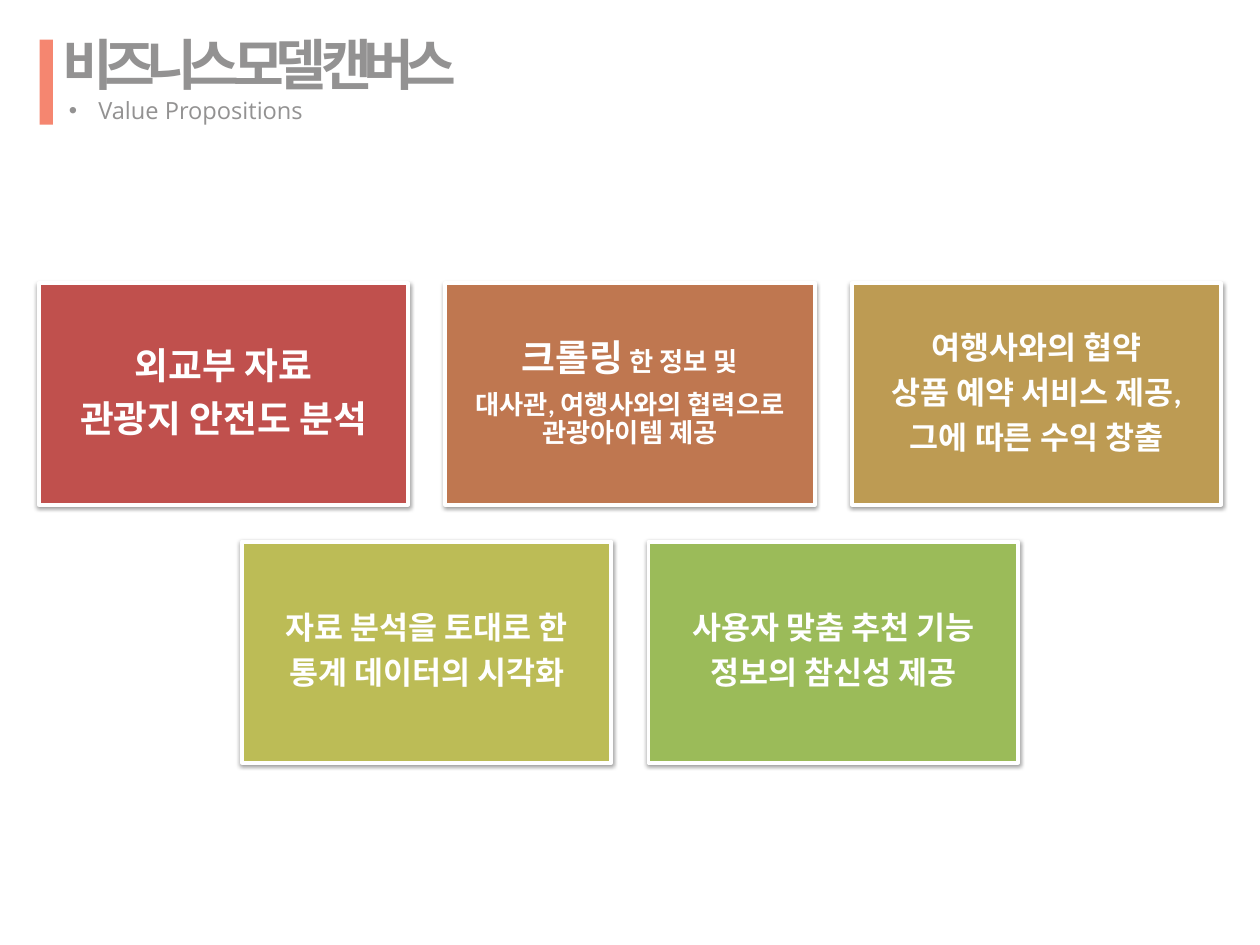
import pptx
import pptx.dml.color
import pptx.enum.shapes
import pptx.enum.text
import pptx.oxml
import pptx.oxml.ns
import pptx.util
from lxml import etree

Inches = pptx.util.Inches
Pt = pptx.util.Pt
RGBColor = pptx.dml.color.RGBColor
RECTANGLE = pptx.enum.shapes.MSO_SHAPE.RECTANGLE
qn = pptx.oxml.ns.qn

WHITE = RGBColor(0xFF, 0xFF, 0xFF)
GRAY = RGBColor(0x93, 0x92, 0x92)
CORAL = RGBColor(0xF5, 0x86, 0x70)
RED = RGBColor(0xC0, 0x50, 0x4D)
RUST = RGBColor(0xBF, 0x77, 0x50)
GOLD = RGBColor(0xBD, 0x9B, 0x53)
OLIVE = RGBColor(0xBC, 0xBC, 0x56)
GREEN = RGBColor(0x9B, 0xBB, 0x59)

SLIDE_WIDTH, SLIDE_HEIGHT = 13.33, 10
MARGIN = 0.42
CARD_WIDTH, CARD_HEIGHT = 3.91, 2.34
GAP = CARD_WIDTH / 10
CARDS_TOP = 0.3 * SLIDE_HEIGHT

# Each card: fill, inset, paragraphs; each paragraph is a list of (text, size).
CARD_ROWS = [
    [
        (RED, 0.12, [[("외교부 자료", 28)], [("관광지 안전도 분석", 28)]]),
        (RUST, 0.12, [[("크롤링", 28), (" 한 정보 및", 20)],
                      [("대사관, 여행사와의 협력으로 관광아이템 제공", 20)]]),
        (GOLD, 0.1, [[("여행사와의 협약", 24)], [("상품 예약 서비스 제공,", 24)],
                     [("그에 따른 수익 창출", 24)]]),
    ],
    [
        (OLIVE, 0.1, [[("자료 분석을 토대로 한", 24)], [("통계 데이터의 시각화", 24)]]),
        (GREEN, 0.1, [[("사용자 맞춤 추천 기능", 24)], [("정보의 참신성 제공", 24)]]),
    ],
]

SHADOW = (
    '<a:effectLst xmlns:a="http://schemas.openxmlformats.org/drawingml/2006/main">'
    '<a:outerShdw blurRad="40000" dist="20000" dir="5400000" rotWithShape="0">'
    '<a:srgbClr val="000000"><a:alpha val="38000"/></a:srgbClr>'
    '</a:outerShdw></a:effectLst>'
)


def set_insets(text_frame, inset):
    text_frame.margin_left = text_frame.margin_right = Inches(inset)
    text_frame.margin_top = text_frame.margin_bottom = Inches(inset)


def style_run(run, font_name, size, color, bold):
    run.font.name = font_name
    run.font.size = Pt(size)
    run.font.color.rgb = color
    run.font.bold = bold


presentation = pptx.Presentation()
presentation.slide_width = Inches(SLIDE_WIDTH)
presentation.slide_height = Inches(SLIDE_HEIGHT)
slide = presentation.slides.add_slide(presentation.slide_layouts[6])

# Heading
heading = slide.shapes.add_textbox(Inches(0.66), Inches(0.34), Inches(6.51), Inches(0.98))
heading_frame = heading.text_frame
heading_frame.word_wrap = True
set_insets(heading_frame, 0)
heading_frame.text = "비즈니스 모델 캔버스\nValue Propositions"
title, subtitle = heading_frame.paragraphs
title.line_spacing = Pt(49.4)
style_run(title.runs[0], "Arial", 42, GRAY, True)
title.runs[0].font._element.set("spc", "-670")
subtitle.line_spacing = Pt(20.6)
style_run(subtitle.runs[0], "Open Sans", 18, GRAY, False)
subtitle_properties = subtitle._p.get_or_add_pPr()
subtitle_properties.set("marL", str(Inches(0.38)))
subtitle_properties.set("indent", str(Inches(-0.31)))
etree.SubElement(subtitle_properties, qn("a:buFont")).set("typeface", "Arial")
etree.SubElement(subtitle_properties, qn("a:buChar")).set("char", "•")

accent_bar = slide.shapes.add_shape(
    RECTANGLE, Inches(MARGIN), Inches(MARGIN), Inches(0.14), Inches(0.9))
accent_bar.shadow.inherit = False
accent_bar.fill.solid()
accent_bar.fill.fore_color.rgb = CORAL
accent_bar.line.fill.background()

# Value cards, each row centred on the slide
for row, cards in enumerate(CARD_ROWS):
    row_width = len(cards) * (CARD_WIDTH + GAP) - GAP
    row_left = (SLIDE_WIDTH - row_width) / 2
    top = CARDS_TOP + row * (CARD_HEIGHT + GAP)
    for column, (color, inset, paragraphs) in enumerate(cards):
        left = row_left + column * (CARD_WIDTH + GAP)
        card = slide.shapes.add_shape(
            RECTANGLE, Inches(left), Inches(top), Inches(CARD_WIDTH), Inches(CARD_HEIGHT))
        card.fill.solid()
        card.fill.fore_color.rgb = color
        card.line.color.rgb = WHITE
        card.line.width = Pt(3)
        card._element.spPr.append(pptx.oxml.parse_xml(SHADOW))

        text_frame = card.text_frame
        text_frame.word_wrap = True
        text_frame.vertical_anchor = pptx.enum.text.MSO_ANCHOR.MIDDLE
        set_insets(text_frame, inset)
        text_frame.text = "\n".join(runs[0][0] for runs in paragraphs)
        for paragraph, runs in zip(text_frame.paragraphs, paragraphs):
            paragraph.alignment = pptx.enum.text.PP_ALIGN.CENTER
            paragraph.line_spacing = 0.9
            paragraph.space_after = Pt(0.35 * runs[0][1])
            for text, size in runs[1:]:
                paragraph.add_run().text = text
            for run, (text, size) in zip(paragraph.runs, runs):
                style_run(run, "Calibri", size, WHITE, True)

presentation.save("out.pptx")
